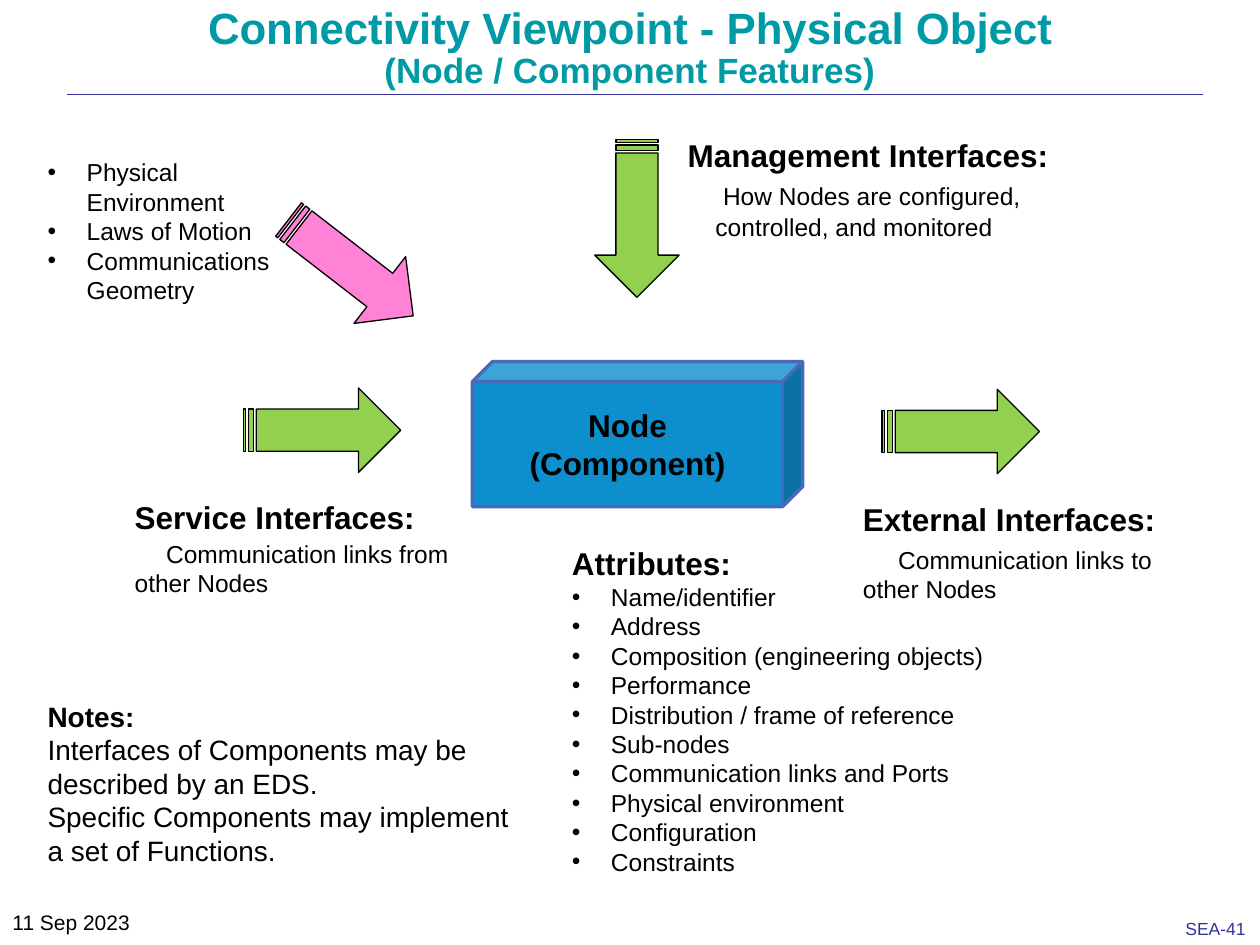
from lxml import etree
from pptx import Presentation
from pptx.dml.color import RGBColor
from pptx.enum.shapes import MSO_CONNECTOR, MSO_SHAPE
from pptx.enum.text import MSO_ANCHOR, PP_ALIGN
from pptx.oxml.ns import qn
from pptx.util import Inches, Pt

CENTER = PP_ALIGN.CENTER
MIDDLE = MSO_ANCHOR.MIDDLE
STRAIGHT = MSO_CONNECTOR.STRAIGHT
CUBE = MSO_SHAPE.CUBE
STRIPED_ARROW = MSO_SHAPE.STRIPED_RIGHT_ARROW

BLACK = RGBColor(0x00, 0x00, 0x00)
TEAL = RGBColor(0x00, 0x99, 0xA6)
NAVY = RGBColor(0x33, 0x33, 0x99)
NODE_BLUE = RGBColor(0x0C, 0x8F, 0xCC)
NODE_EDGE = RGBColor(0x48, 0x6A, 0xBB)
GREEN = RGBColor(0x92, 0xD0, 0x50)
PINK = RGBColor(0xFF, 0x82, 0xD6)

FONT = "Arial"
BULLET_INDENT = 0.31

ENVIRONMENT = ["Physical Environment", "Laws of Motion", "Communications Geometry"]
ATTRIBUTES = [
    "Name/identifier", "Address", "Composition (engineering objects)",
    "Performance", "Distribution / frame of reference", "Sub-nodes",
    "Communication links and Ports", "Physical environment",
    "Configuration", "Constraints",
]


def write(frame, text, size=14, bold=False, color=BLACK, align=None,
          spacing=None, before=0, first_indent=0, bullet=False):
    """Append one formatted paragraph, using the empty first one if free."""
    para = frame.paragraphs[0]
    if para.runs:
        para = frame.add_paragraph()
    properties = para._p.get_or_add_pPr()
    if bullet:
        properties.set("marL", str(Inches(BULLET_INDENT)))
        first_indent = -BULLET_INDENT
        etree.SubElement(properties, qn("a:buFont")).set("typeface", FONT)
        etree.SubElement(properties, qn("a:buChar")).set("char", "•")
    if first_indent:
        properties.set("indent", str(Inches(first_indent)))
    if align is not None:
        para.alignment = align
    if spacing:
        para.line_spacing = spacing
    if before:
        para.space_before = Pt(before)
    span = para.add_run()
    span.text = text
    span.font.name = FONT
    span.font.size = Pt(size)
    span.font.bold = bold
    span.font.color.rgb = color


def add_text_box(page, left, top, width, height, wrap=True):
    box = page.shapes.add_textbox(Inches(left), Inches(top), Inches(width), Inches(height))
    box.text_frame.word_wrap = wrap
    return box.text_frame


def add_solid(page, kind, left, top, width, height, fill, edge, edge_width):
    solid = page.shapes.add_shape(kind, Inches(left), Inches(top), Inches(width), Inches(height))
    solid.shadow.inherit = False
    solid.fill.solid()
    solid.fill.fore_color.rgb = fill
    solid.line.color.rgb = edge
    solid.line.width = Pt(edge_width)
    return solid


def add_arrow(page, left, top, fill=GREEN, rotation=0):
    arrow = add_solid(page, STRIPED_ARROW, left, top, 1.25, 0.67, fill, BLACK, 0.75)
    arrow.rotation = rotation


def add_rule(page, left, right, top):
    rule = page.shapes.add_connector(
        STRAIGHT, Inches(left), Inches(top), Inches(right), Inches(top))
    rule.line.color.rgb = NAVY
    rule.line.width = Pt(0.13)
    etree.SubElement(rule._element.spPr, qn("a:effectLst"))


def add_bullets(frame, items):
    for item in items:
        write(frame, item, bullet=True)


def add_interface(page, place, heading, lines, wrap=True):
    """Bold heading; each line is (text, first-line indent, space before)."""
    frame = add_text_box(page, *place, wrap=wrap)
    write(frame, heading, size=18, bold=True)
    for text, indent, before in lines:
        write(frame, text, first_indent=indent, before=before)


def add_node(page):
    node = add_solid(page, CUBE, 3.75, 2.87, 2.62, 1.15, NODE_BLUE, NODE_EDGE, 2)
    node.adjustments[0] = 0.138
    node.text_frame.vertical_anchor = MIDDLE
    for text in ("Node", "(Component)"):
        write(node.text_frame, text, size=18, bold=True, align=CENTER)


def main():
    deck = Presentation()
    deck.slide_width, deck.slide_height = Inches(10), Inches(7.5)
    page = deck.slides.add_slide(deck.slide_layouts[6])

    # Title, rule and footer
    add_rule(page, 0.53, 9.55, 0.75)
    title = add_text_box(page, 0.5, 0, 9, 0.48)
    for text, size in (("Connectivity Viewpoint - Physical Object", 25),
                       ("(Node / Component Features)", 20)):
        write(title, text, size=size, bold=True, color=TEAL, align=CENTER, spacing=0.9)
    write(add_text_box(page, 9.31, 7.24, 0.68, 0.26, wrap=False), "SEA-41",
          size=10, color=NAVY)
    write(add_text_box(page, 0, 7.17, 2.08, 0.5), "11 Sep 2023", size=12)

    # Node and its attributes
    add_node(page)
    attributes = add_text_box(page, 4.44, 4.27, 3.49, 2.76, wrap=False)
    write(attributes, "Attributes:", size=18, bold=True)
    add_bullets(attributes, ATTRIBUTES)

    # Interfaces
    add_interface(page, (6.75, 3.92, 2.75, 0.94), "External Interfaces:",
                  [("Communication links to other Nodes", 0.28, 4)])
    add_interface(page, (5.36, 1.03, 3.09, 0.94), "Management Interfaces:",
                  [("How Nodes are configured,", 0.28, 4),
                   ("controlled, and monitored", 0.22, 1)], wrap=False)
    add_interface(page, (0.97, 3.9, 2.82, 0.91), "Service Interfaces:",
                  [("Communication links from other Nodes", 0.25, 2)])

    # Arrows towards and away from the node
    add_arrow(page, 4.43, 1.4, rotation=90)
    add_arrow(page, 1.93, 3.08)
    add_arrow(page, 7, 3.09)
    add_arrow(page, 2.16, 1.79, fill=PINK, rotation=37.7)

    # Environment and notes
    add_bullets(add_text_box(page, 0.28, 1.2, 2.05, 1.28), ENVIRONMENT)
    notes = add_text_box(page, 0.28, 5.5, 3.9, 1.45)
    write(notes, "Notes:", size=16, bold=True)
    for text in ("Interfaces of Components may be described by an EDS.",
                 "Specific Components may implement a set of Functions."):
        write(notes, text, size=16)

    deck.save("out.pptx")


if __name__ == "__main__":
    main()
